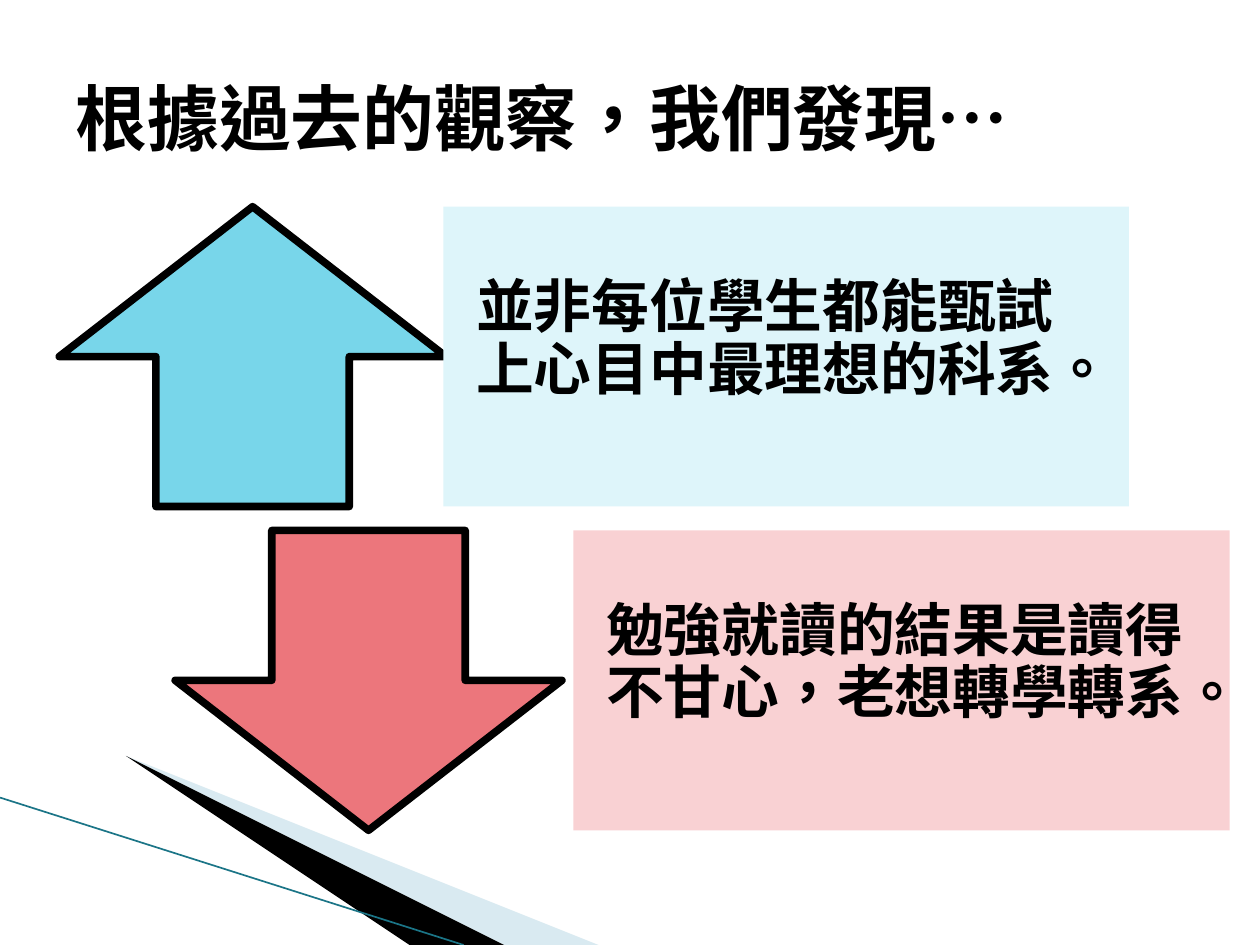
from lxml.etree import SubElement
from pptx import Presentation
from pptx.dml.color import RGBColor
from pptx.enum.lang import MSO_LANGUAGE_ID as LANG
from pptx.enum.shapes import MSO_CONNECTOR, MSO_SHAPE as SHAPE
from pptx.enum.text import MSO_ANCHOR, PP_ALIGN
from pptx.oxml.ns import qn
from pptx.util import Inches, Pt

WIDTH, HEIGHT = 10, 7.5
ROW_TOP, ROW_STEP, ROW_HEIGHT = 1.64, 2.57, 2.38
ARROW_WIDTH = 3.07
# arrow shape, arrow left, arrow colour, panel left, panel width, panel colour, text
ROWS = [
    (SHAPE.UP_ARROW, 0.47, "78D6EA", 3.52, 5.44, "DEF5FA",
     "並非每位學生都能甄試上心目中最理想的科系。"),
    (SHAPE.DOWN_ARROW, 1.39, "EC767C", 4.55, 5.21, "F9D1D3",
     "勉強就讀的結果是讀得不甘心，老想轉學轉系。"),
]


def rgb(color):
    return RGBColor.from_string(color)


def paint(sp, fill, line=None, line_width=1):
    sp.shadow.inherit = False
    sp.fill.solid()
    sp.fill.fore_color.rgb = rgb(fill)
    if line:
        sp.line.color.rgb = rgb(line)
        sp.line.width = Pt(line_width)
    else:
        sp.line.fill.background()


def write(sp, text, size, spacing=1.0, insets=(0.1, 0.05, 0.1, 0.05)):
    tf = sp.text_frame
    tf.word_wrap = True
    tf.vertical_anchor = MSO_ANCHOR.MIDDLE
    (tf.margin_left, tf.margin_top,
     tf.margin_right, tf.margin_bottom) = map(Inches, insets)
    p = tf.paragraphs[0]
    p.alignment = PP_ALIGN.LEFT
    p.line_spacing = spacing
    r = p.add_run()
    r.text = text
    r.font.name = "Courier New"
    r.font.size = Pt(size)
    r.font.bold = True
    r.font.color.rgb = rgb("000000")
    r.font.language_id = LANG.TRADITIONAL_CHINESE


def add_block(slide, shape, left, top, width, height, fill, **line):
    sp = slide.shapes.add_shape(
        shape, Inches(left), Inches(top), Inches(width), Inches(height))
    paint(sp, fill, **line)
    return sp


def add_wedge(slide, points, fill, alpha=None):
    """Add a filled polygon; alpha is its opacity in percent."""
    builder = slide.shapes.build_freeform(*points[0], scale=Inches(1))
    builder.add_line_segments(points[1:], close=True)
    sp = builder.convert_to_shape()
    paint(sp, fill)
    if alpha:
        color = sp._element.spPr.find(qn("a:solidFill"))[0]
        SubElement(color, qn("a:alpha"), val=str(alpha * 1000))


def add_line(slide, start, end, color, width):
    line = slide.shapes.add_connector(
        MSO_CONNECTOR.STRAIGHT, *map(Inches, start + end))
    line.line.color.rgb = rgb(color)
    line.line.width = Pt(width)
    SubElement(line._element.spPr, qn("a:effectLst"))


def add_corner(slide):
    add_wedge(slide, [(0.55, 6.5), (5.9, HEIGHT), (4.53, HEIGHT)], "A0CBDC", 40)
    add_wedge(slide, [(0.53, 6.49), (4.53, HEIGHT), (3.68, HEIGHT)], "000000")
    add_line(slide, (0, 6.33), (3.68, HEIGHT), "1B7587", 0.95)


def add_row(slide, index, row):
    arrow, arrow_left, arrow_fill, left, width, fill, text = row
    top = ROW_TOP + index * ROW_STEP
    add_block(slide, arrow, arrow_left, top, ARROW_WIDTH, ROW_HEIGHT,
              arrow_fill, line="000000", line_width=4.33)
    panel = add_block(slide, SHAPE.RECTANGLE, left, top, width, ROW_HEIGHT, fill)
    write(panel, text, 33, spacing=0.9, insets=(0.26, 0, 0.26, 0.26))


def set_title(slide, text):
    title = slide.shapes.title
    title.left, title.top = Inches(0.5), Inches(0.3)
    title.width, title.height = Inches(9), Inches(1.25)
    write(title, text, 41)


def main():
    prs = Presentation()
    prs.slide_width, prs.slide_height = Inches(WIDTH), Inches(HEIGHT)
    slide = prs.slides.add_slide(prs.slide_layouts[5])
    set_title(slide, "根據過去的觀察，我們發現…")
    add_corner(slide)
    for index, row in enumerate(ROWS):
        add_row(slide, index, row)
    prs.save("out.pptx")


if __name__ == "__main__":
    main()
